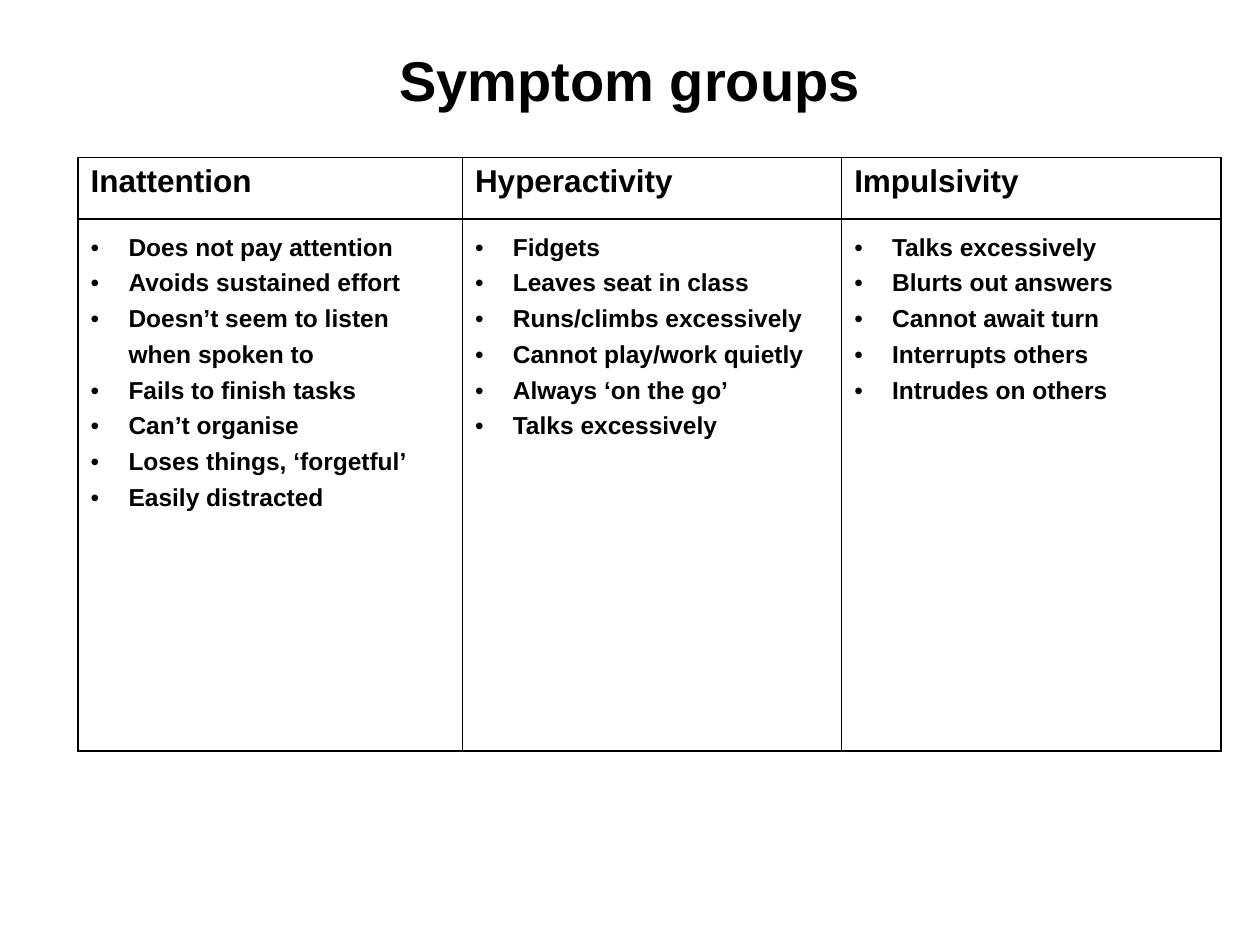
from lxml.etree import SubElement
from pptx import Presentation
from pptx.dml.color import RGBColor
from pptx.enum.text import MSO_ANCHOR as Anchor, PP_ALIGN as Align
from pptx.oxml.ns import qn
from pptx.util import Inches, Pt

COLORS = {"ink": "000000", "paper": "FFFFFF"}
FONT = "Arial"
COLUMN_WIDTHS = [3.05, 3.01, 3.01]
ROW_HEIGHTS = [0.49, 4.22]
INDENT = 0.3

SYMPTOMS = {
    "Inattention": [
        "Does not pay attention",
        "Avoids sustained effort",
        "Doesn’t seem to listen when spoken to",
        "Fails to finish tasks",
        "Can’t organise",
        "Loses things, ‘forgetful’",
        "Easily distracted",
    ],
    "Hyperactivity": [
        "Fidgets",
        "Leaves seat in class",
        "Runs/climbs excessively",
        "Cannot play/work quietly",
        "Always ‘on the go’",
        "Talks excessively",
    ],
    "Impulsivity": [
        "Talks excessively",
        "Blurts out answers",
        "Cannot await turn",
        "Interrupts others",
        "Intrudes on others",
    ],
}


def add_bullet(para):
    props = para._p.get_or_add_pPr()
    props.set("marL", str(Inches(INDENT)))
    props.set("indent", str(-Inches(INDENT)))
    SubElement(props, qn("a:buFont"), typeface=FONT)
    SubElement(props, qn("a:buChar"), char="•")
    tabs = SubElement(props, qn("a:tabLst"))
    SubElement(tabs, qn("a:tab"), pos=str(Inches(0.5)), algn="l")


def write(frame, lines, size, align=Align.LEFT, spacing=None, bullet=False):
    """Fill a text frame with one bold paragraph per line."""
    for index, line in enumerate(lines):
        para = frame.paragraphs[0] if index == 0 else frame.add_paragraph()
        para.alignment = align
        if spacing:
            para.line_spacing = spacing
        if bullet:
            add_bullet(para)
        span = para.add_run()
        span.text = line
        span.font.name = FONT
        span.font.size = Pt(size)
        span.font.bold = True
        span.font.color.rgb = RGBColor.from_string(COLORS["ink"])


def style_cell(cell):
    """Draw a thin line on all four sides, with no fill."""
    props = cell._tc.get_or_add_tcPr()
    for side in ("lnL", "lnR", "lnT", "lnB"):
        line = SubElement(props, qn(f"a:{side}"), w=str(Pt(1)))
        fill = SubElement(line, qn("a:solidFill"))
        SubElement(fill, qn("a:srgbClr"), val=COLORS["ink"])
    cell.fill.background()


def add_title(page, text):
    title = page.shapes.title
    title.left, title.top = Inches(1.22), 0
    title.width, title.height = Inches(7.56), Inches(1.25)
    title.text_frame.vertical_anchor = Anchor.MIDDLE
    write(title.text_frame, [text], size=32, align=Align.CENTER)


def add_symptom_table(page, groups):
    table = page.shapes.add_table(
        len(ROW_HEIGHTS), len(groups), Inches(0.62), Inches(1.25),
        Inches(sum(COLUMN_WIDTHS)), Inches(sum(ROW_HEIGHTS))).table
    table.horz_banding = False
    for row, height in zip(table.rows, ROW_HEIGHTS):
        row.height = Inches(height)
    for index, (heading, symptoms) in enumerate(groups.items()):
        table.columns[index].width = Inches(COLUMN_WIDTHS[index])
        head, body = table.cell(0, index), table.cell(1, index)
        style_cell(head)
        style_cell(body)
        write(head.text_frame, [heading], size=18)
        write(body.text_frame, symptoms, size=14, spacing=1.3, bullet=True)


def main():
    deck = Presentation()
    deck.slide_width, deck.slide_height = Inches(10), Inches(7.5)
    page = deck.slides.add_slide(deck.slide_layouts[5])
    page.background.fill.solid()
    page.background.fill.fore_color.rgb = RGBColor.from_string(COLORS["paper"])
    add_title(page, "Symptom groups")
    add_symptom_table(page, SYMPTOMS)
    deck.save("out.pptx")


if __name__ == "__main__":
    main()
